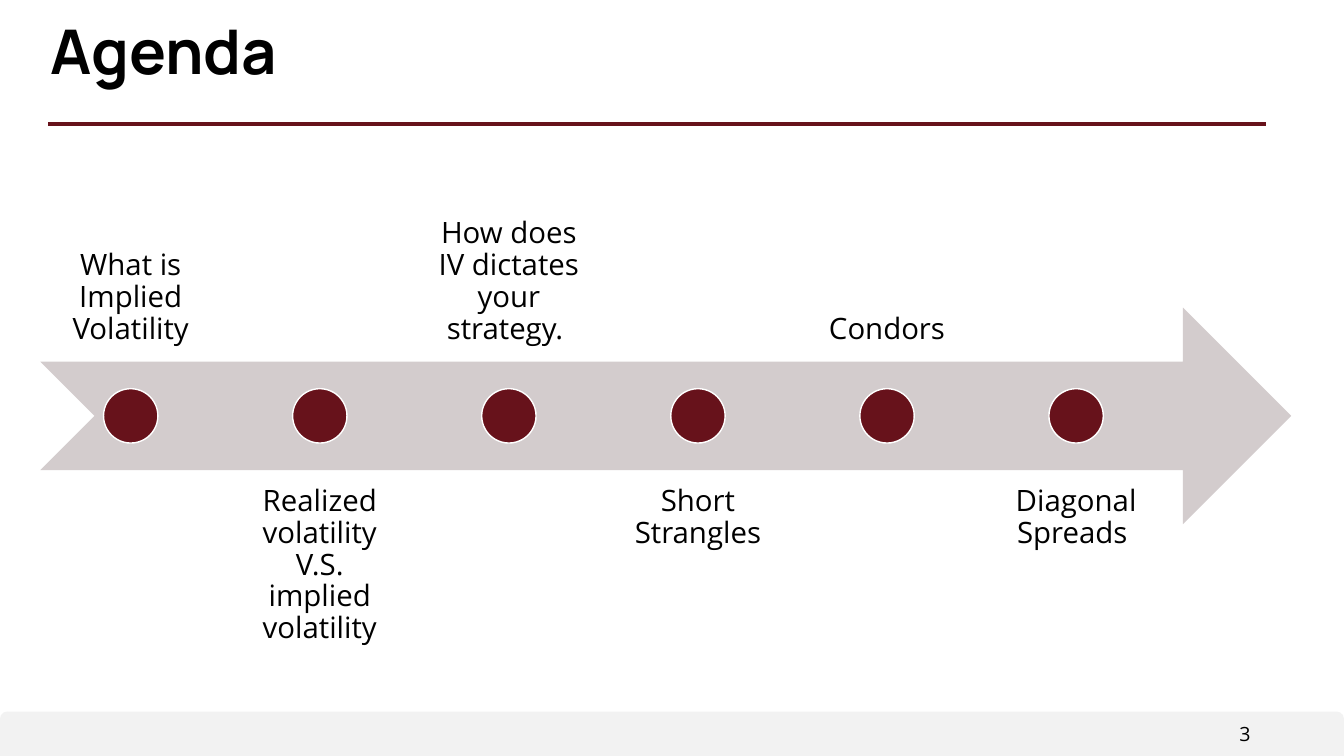
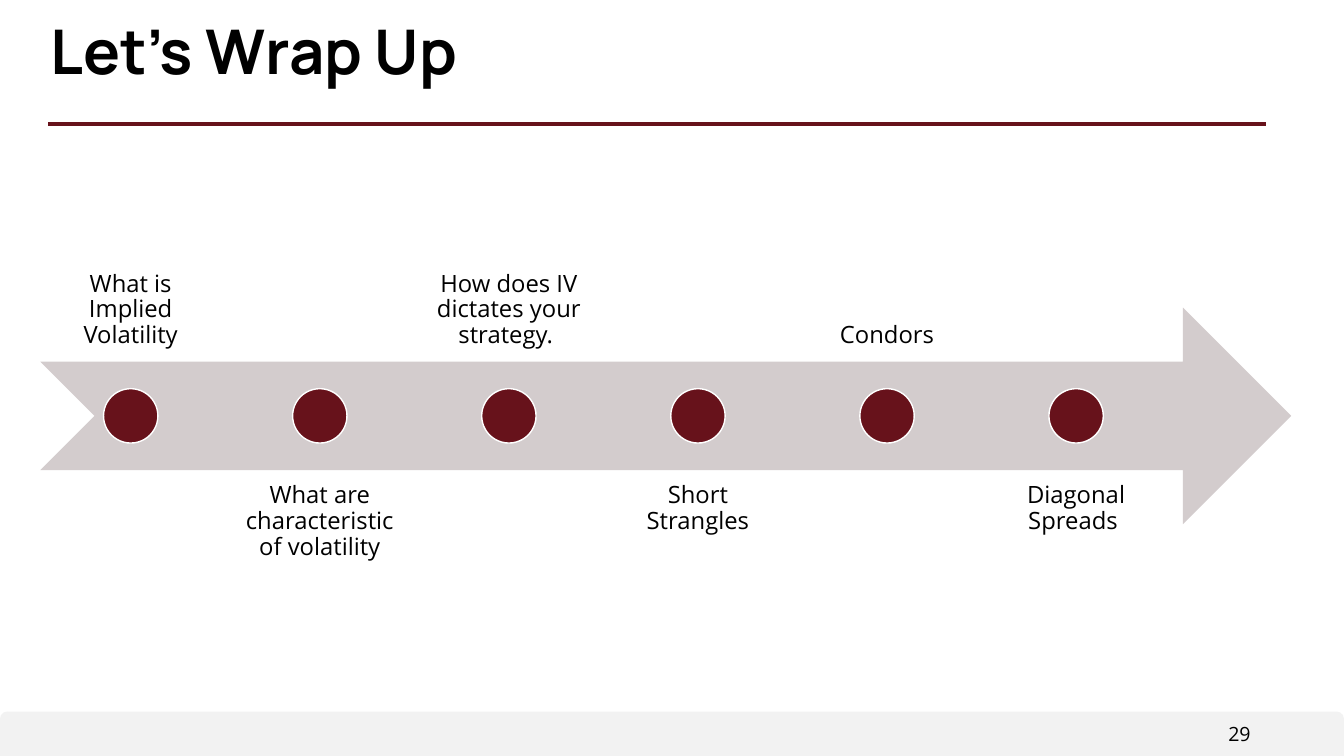
"""Build two timeline slides: an agenda and a wrap-up."""
from dataclasses import dataclass

from lxml import etree
from pptx import Presentation
from pptx import util as u
from pptx.dml.color import RGBColor as Rgb
from pptx.enum import shapes, text
from pptx.oxml import ns


@dataclass(frozen=True)
class Theme:
    ink: Rgb = Rgb(0, 0, 0)
    wine: Rgb = Rgb(0x67, 0x12, 0x1B)
    arrow: Rgb = Rgb(0xD3, 0xCC, 0xCD)
    band: Rgb = Rgb(0xF2, 0xF2, 0xF2)
    white: Rgb = Rgb(255, 255, 255)
    head: str = "Manrope"
    body: str = "Open Sans"
    title: int = 44
    page: int = 14


look = Theme()
kind = shapes.MSO_SHAPE
side = text.PP_ALIGN
hold = text.MSO_ANCHOR


def draw(slide, form, x, y, w, h, fill, edge=None):
    shape = slide.shapes.add_shape(form, u.Cm(x), u.Cm(y), u.Cm(w), u.Cm(h))
    shape.shadow.inherit = False
    shape.fill.solid()
    shape.fill.fore_color.rgb = fill
    if edge is None:
        shape.line.fill.background()
    else:
        shape.line.color.rgb = edge
        shape.line.width = u.Pt(1)
    return shape


def write(box, words, font, size, align, anchor, pad, bold=False, lead=0.9):
    frame = box.text_frame
    frame.text = words
    frame.word_wrap = True
    frame.auto_size = text.MSO_AUTO_SIZE.NONE
    frame.vertical_anchor = anchor
    frame.margin_left = frame.margin_right = u.Cm(pad[0])
    frame.margin_top = frame.margin_bottom = u.Cm(pad[1])
    para = frame.paragraphs[0]
    para.alignment = align
    para.line_spacing = lead
    for run in para.runs:
        run.font.name = font
        run.font.size = u.Pt(size)
        run.font.bold = bold
        run.font.color.rgb = look.ink


decks = [
    ("Agenda", "3", 21, 0.41, [
        "What is Implied Volatility",
        "Realized volatility V.S. implied volatility",
        "How does IV dictates your strategy. ",
        "Short Strangles", "Condors", "Diagonal Spreads "]),
    ("Let’s Wrap Up", "29", 17, 0.33, [
        "What is Implied Volatility",
        "What are characteristic of volatility",
        "How does IV dictates your strategy. ",
        "Short Strangles", "Condors", "Diagonal Spreads "]),
]

left, top, wide, high = 1.02, 7.75, 31.52, 5.46
step, span, dot = 4.765, 4.55, 1.37

prs = Presentation()
prs.slide_width, prs.slide_height = u.Cm(33.87), u.Cm(19.05)
base = prs.slide_layouts[5]
name = base.placeholders[0]
name.left, name.top = u.Cm(left), u.Cm(0.53)
name.width, name.height = u.Cm(wide), u.Cm(2.31)
pages = [prs.slides.add_slide(base) for deck in decks]

band = draw(pages[0], kind.ROUND_2_SAME_RECTANGLE, 0, 17.93, 33.87, 1.12, look.band)
rule = pages[0].shapes.add_connector(
    shapes.MSO_CONNECTOR.STRAIGHT, u.Cm(1.22), u.Cm(3.12), u.Cm(31.9), u.Cm(3.12))
rule.line.color.rgb = look.wine
rule.line.width = u.Pt(2.5)
etree.SubElement(rule.element.spPr, ns.qn("a:effectLst"))
for part in (band, rule):
    base.shapes.element.append(part.element)

for page, (title, count, size, pad, labels) in zip(pages, decks):
    write(page.shapes.title, title, look.head, look.title, side.LEFT,
          hold.TOP, (0.25, 0), bold=True)
    box = page.shapes.add_textbox(u.Cm(27.48), u.Cm(18.06), u.Cm(4.29), u.Cm(0.86))
    write(box, count, look.body, look.page, side.RIGHT, hold.MIDDLE,
          (0.25, 0.13), lead=1)
    draw(page, kind.NOTCHED_RIGHT_ARROW, left, top, wide, high, look.arrow)
    for i, label in enumerate(labels):
        x = left + i * step
        above = i % 2 == 0
        y = top - 0.75 * high if above else top + 0.75 * high
        box = page.shapes.add_textbox(u.Cm(x), u.Cm(y), u.Cm(span), u.Cm(high))
        write(box, label, look.body, size, side.CENTER,
              hold.BOTTOM if above else hold.TOP, (pad, pad))
        draw(page, kind.OVAL, x + (span - dot) / 2, top + (high - dot) / 2,
             dot, dot, look.wine, look.white)

prs.save("out.pptx")
